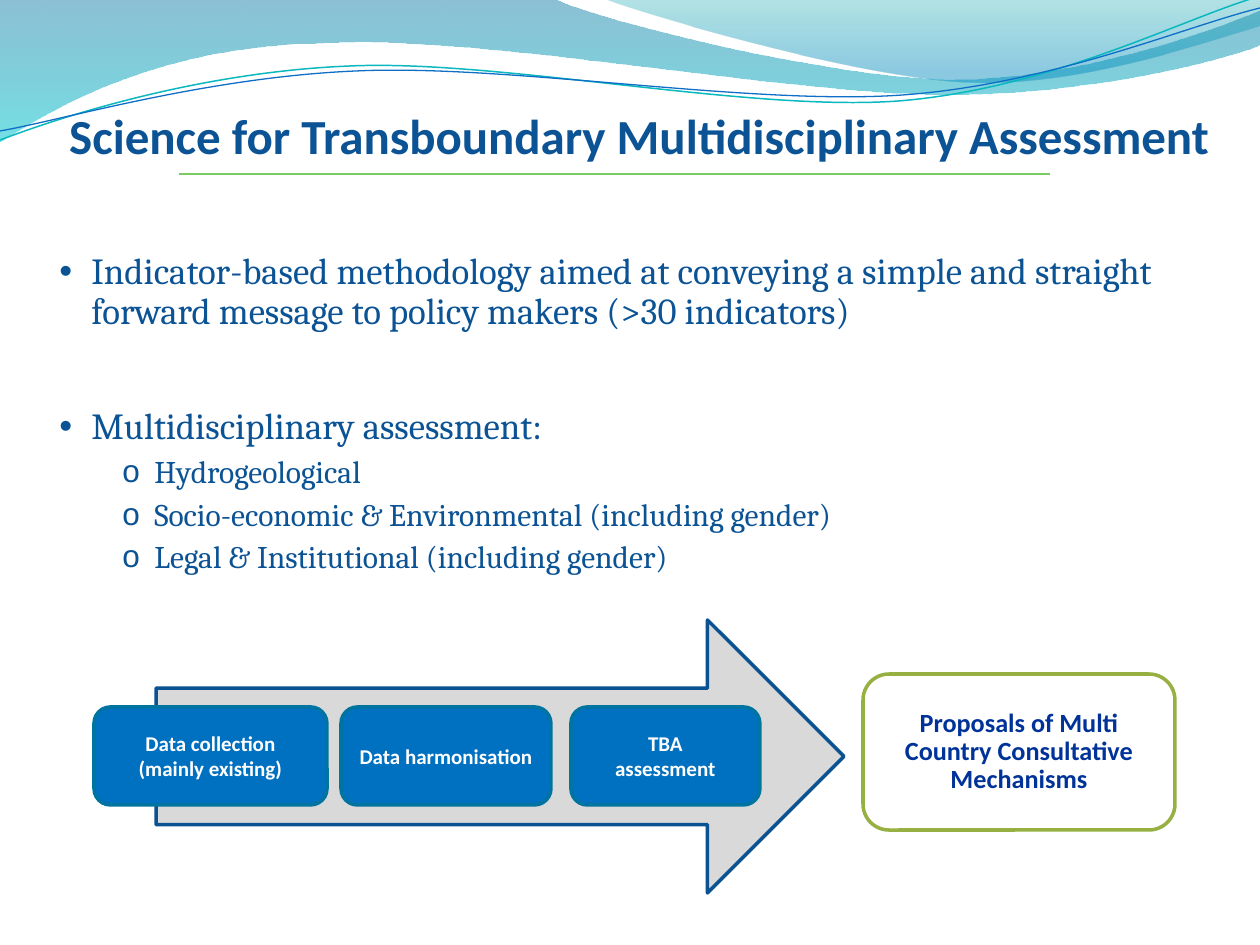
from lxml import etree
from pptx import Presentation
from pptx import util as u
from pptx.dml.color import RGBColor
from pptx.enum import shapes, text
from pptx.oxml.ns import qn

PX = 914400 // 126
COLORS = {
    "navy": "0B5394", "green": "7CCA62", "grey": "D9D9D9", "arrow_edge": "0B5292",
    "blue": "0070C0", "teal": "0074A1", "white": "FFFFFF", "olive": "96B042",
    "royal": "003399", "aqua": "0AB8BF", "wave_blue": "0F6FC6",
    "lagoon": "00C6CF", "sea": "00A1A9", "sky": "008BBF",
}


def rgb(name):
    return RGBColor.from_string(COLORS[name])


def add_curve(page, start, segments, close):
    """Add an outline of straight (2 numbers) and cubic (6 numbers) segments."""
    points = [pair for segment in segments for pair in zip(segment[::2], segment[1::2])]
    builder = page.shapes.build_freeform(*start, scale=PX)
    builder.add_line_segments(points, close=close)
    curve = builder.convert_to_shape()
    curve.shadow.inherit = False
    lines = iter(list(curve._element.iter(qn("a:lnTo"))))
    for segment in segments:
        nodes = [next(lines) for _ in segment[::2]]
        if len(nodes) == 3:
            nodes[0].tag = qn("a:cubicBezTo")
            for node in nodes[1:]:
                nodes[0].append(node[0])
                node.getparent().remove(node)
    return curve


deck = Presentation()
deck.slide_width, deck.slide_height = u.Inches(10), u.Inches(7.5)
page = deck.slides.add_slide(deck.slide_layouts[5])

# Filled waves: start, segments, gradient stops (position, colour, opacity %)
waves = [
    ((0, 0), [(554, -1), (600, 21, 837, 79, 955, 79), (1075, 79, 1207, 33, 1260, 11),
              (1261, 45), (1239, 55, 1096, 96, 940, 94), (784, 94, 481, 35, 324, 43),
              (163, 45, 58, 105, -1, 142)],
     [(0, "teal", 45), (1, "lagoon", 55)]),
    ((604, -1), [(641, 14, 859, 78, 969, 82), (1079, 87, 1211, 40, 1260, 26), (1260, 0)],
     [(0, "sea", 30), (0.8, "sky", 45)]),
]
for start, segments, stops in waves:
    wave = add_curve(page, start, segments, True)
    wave.line.fill.background()
    wave.fill.gradient()
    wave.fill.gradient_angle = 270
    for stop, (position, color, opacity) in zip(wave.fill.gradient_stops, stops):
        stop.position = position
        stop.color.rgb = rgb(color)
        color_node = stop._gs.find(qn("a:srgbClr"))
        etree.SubElement(color_node, qn("a:alpha"), val=str(opacity * 1000))

# Thin wave lines
strands = [
    ((0, 140), [(60, 117, 199, 72, 349, 66), (498, 59, 747, 112, 898, 101),
                (1050, 89, 1182, 19, 1257, -3)], "aqua", 0.85),
    ((0, 131), [(59, 121, 207, 77, 357, 71), (508, 64, 752, 106, 903, 95),
                (1053, 84, 1186, 26, 1260, 8)], "wave_blue", 0.75),
]
for start, segments, color, width in strands:
    strand = add_curve(page, start, segments, False)
    strand.fill.background()
    strand.line.color.rgb = rgb(color)
    strand.line.width = u.Pt(width)

# Title and rule
title = page.shapes.title
title.left, title.top, title.width, title.height = 9 * PX, 95 * PX, 1260 * PX, 79 * PX
frame = title.text_frame
frame.text = "Science for Transboundary Multidisciplinary Assessment"
frame.word_wrap = True
frame.auto_size = text.MSO_AUTO_SIZE.NONE
frame.vertical_anchor = text.MSO_ANCHOR.MIDDLE
frame.margin_left = frame.margin_right = 9 * PX
frame.margin_top = frame.margin_bottom = 5 * PX
paragraph = frame.paragraphs[0]
paragraph.alignment = text.PP_ALIGN.CENTER
font = paragraph.runs[0].font
font.name, font.size, font.bold = "Calibri", u.Pt(28), True
font.color.rgb = rgb("navy")

rule = page.shapes.add_connector(shapes.MSO_CONNECTOR.STRAIGHT,
                                 179 * PX, 174 * PX, 1050 * PX, 174 * PX)
rule.line.color.rgb = rgb("green")
rule.line.width = u.Pt(1.5)
etree.SubElement(rule._element.spPr, qn("a:effectLst"))

# Arrow with process steps, and the outcome
arrow, rounded = shapes.MSO_SHAPE.RIGHT_ARROW, shapes.MSO_SHAPE.ROUNDED_RECTANGLE
blocks = [
    (arrow, 156, 620, 688, 273, "grey", "arrow_edge", "", 12, "white", 8),
    (rounded, 94, 707, 233, 98, "blue", "teal", "Data collection\v(mainly existing)", 12, "white", 8),
    (rounded, 341, 707, 210, 98, "blue", "teal", "Data harmonisation", 12, "white", 8),
    (rounded, 571, 707, 189, 98, "blue", "teal", "TBA\vassessment", 12, "white", 8),
    (rounded, 863, 674, 312, 156, "white", "olive",
     "Proposals of Multi Country Consultative Mechanisms", 15, "royal", 21),
]
for kind, left, top, width, height, fill, edge, label, size, ink, inset in blocks:
    box = page.shapes.add_shape(kind, left * PX, top * PX, width * PX, height * PX)
    box.shadow.inherit = False
    box.fill.solid()
    box.fill.fore_color.rgb = rgb(fill)
    box.line.color.rgb = rgb(edge)
    box.line.width = u.Pt(2)
    if not label:
        continue
    frame = box.text_frame
    frame.text = label
    frame.word_wrap = True
    frame.vertical_anchor = text.MSO_ANCHOR.MIDDLE
    frame.margin_left = frame.margin_right = inset * PX
    paragraph = frame.paragraphs[0]
    paragraph.alignment = text.PP_ALIGN.CENTER
    paragraph.line_spacing = 0.9 if size == 15 else 1.0
    for span in paragraph.runs:
        span.font.name, span.font.size, span.font.bold = "Calibri", u.Pt(size), True
        span.font.color.rgb = rgb(ink)

# Bullets: text, level, space before
bullets = [
    ("Indicator-based methodology aimed at conveying a simple and straight forward "
     "message to policy makers (>30 indicators)", 0, 0),
    ("Multidisciplinary assessment:", 0, 43),
    ("Hydrogeological", 1, 5),
    ("Socio-economic & Environmental (including gender)", 1, 5),
    ("Legal & Institutional (including gender)", 1, 5),
]
body = page.shapes.add_textbox(47 * PX, 247 * PX, 1182 * PX, 535 * PX)
frame = body.text_frame
frame.word_wrap = True
for index, (line, level, space) in enumerate(bullets):
    paragraph = frame.add_paragraph() if index else frame.paragraphs[0]
    paragraph.text = line
    paragraph.level = level
    props = paragraph._p.get_or_add_pPr()
    props.set("marL", str((32, 95)[level] * PX))
    props.set("indent", str(-32 * PX))
    bullet_color = etree.SubElement(props, qn("a:buClr"))
    etree.SubElement(bullet_color, qn("a:srgbClr"), val=COLORS["navy"])
    etree.SubElement(props, qn("a:buFont"), typeface="Arial")
    etree.SubElement(props, qn("a:buChar"), char="•o"[level])
    paragraph.line_spacing = 0.9
    paragraph.space_before = u.Pt(space)
    font = paragraph.runs[0].font
    font.name, font.size = "Cambria", u.Pt((21, 18)[level])
    font.color.rgb = rgb("navy")

deck.save("out.pptx")
